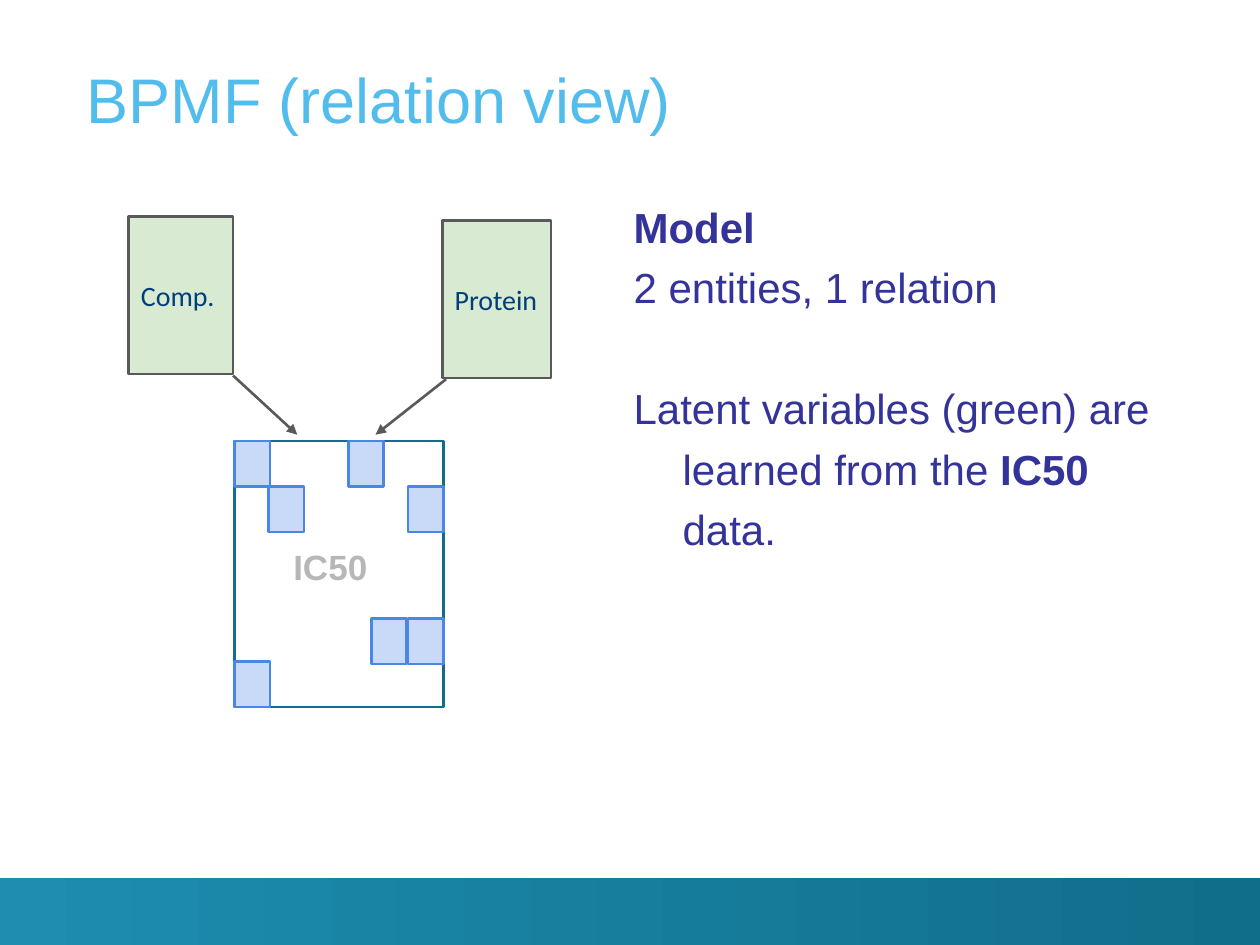
from lxml.etree import SubElement
from pptx import Presentation
from pptx.dml.color import RGBColor
from pptx.enum.shapes import MSO_CONNECTOR, MSO_SHAPE
from pptx.enum.text import MSO_ANCHOR, PP_ALIGN
from pptx.oxml.ns import qn
from pptx.util import Pt


def paint(code):
    return RGBColor.from_string(code)


class Deck:
    sans, label = "Arial", "Calibri"
    sky, ink, navy, gray = "52BDEC", "333399", "00407A", "B7B7B7"
    teal, edge, dark = "116E8A", "4A86E8", "595959"
    blue, green = "C9DAF8", "D9EAD3"
    pad, line = 7.2, 1.5

    def __init__(self, wide, high):
        self.prs = Presentation()
        self.prs.slide_width, self.prs.slide_height = Pt(wide), Pt(high)
        self.slide = self.prs.slides.add_slide(self.prs.slide_layouts[6])
        self.shapes = self.slide.shapes

    def rect(self, x, y, w, h, fill=None, edge=None):
        box = self.shapes.add_shape(MSO_SHAPE.RECTANGLE, Pt(x), Pt(y), Pt(w), Pt(h))
        box.shadow.inherit = False
        if fill:
            box.fill.solid()
            box.fill.fore_color.rgb = paint(fill)
        else:
            box.fill.background()
        if edge:
            box.line.color.rgb = paint(edge)
            box.line.width = Pt(self.line)
        else:
            box.line.fill.background()
        return box

    def band(self, x, y, w, h, start, end):
        fill = self.rect(x, y, w, h).fill
        fill.gradient()
        fill.gradient_angle = 0
        for stop, code in zip(fill.gradient_stops, (start, end)):
            stop.color.rgb = paint(code)

    def frame(self, box, anchor):
        text = box.text_frame
        text.word_wrap = True
        text.vertical_anchor = anchor
        text.margin_left = text.margin_right = Pt(self.pad)
        text.margin_top = text.margin_bottom = Pt(self.pad)
        return text

    def run(self, para, words, size, color, font=sans, bold=False):
        para.alignment = PP_ALIGN.LEFT
        run = para.add_run()
        run.text = words
        run.font.size, run.font.bold, run.font.name = Pt(size), bold, font
        run.font.color.rgb = paint(color)

    def text(self, x, y, w, h, anchor=MSO_ANCHOR.TOP):
        return self.frame(self.shapes.add_textbox(Pt(x), Pt(y), Pt(w), Pt(h)), anchor)

    def node(self, x, y, w, h, words):
        text = self.frame(self.rect(x, y, w, h, self.green, self.dark), MSO_ANCHOR.MIDDLE)
        self.run(text.paragraphs[0], words, 16, self.navy, self.label)

    def body(self, x, y, w, h, paras):
        text = self.text(x, y, w, h)
        for i, (gap, runs) in enumerate(paras):
            para = text.paragraphs[0] if i == 0 else text.add_paragraph()
            props = para._p.get_or_add_pPr()
            props.set("marL", str(Pt(28)))
            props.set("indent", str(Pt(-28)))
            para.line_spacing = 1.2
            if gap:
                para.space_before = Pt(gap)
            for words, bold in runs:
                self.run(para, words, 24, self.ink, bold=bold)

    def arrow(self, x1, y1, x2, y2):
        link = self.shapes.add_connector(
            MSO_CONNECTOR.STRAIGHT, Pt(x1), Pt(y1), Pt(x2), Pt(y2))
        link.line.color.rgb = paint(self.dark)
        link.line.width = Pt(self.line)
        SubElement(link.line._get_or_add_ln(), qn("a:tailEnd"), type="triangle")
        SubElement(link._element.spPr, qn("a:effectLst"))


def main():
    deck = Deck(720, 540)

    # Footer band and title
    deck.band(0, 501.8, 720, 38.2, "1D8DB0", deck.teal)
    title = deck.text(42.5, 14.4, 656, 70.6, MSO_ANCHOR.BOTTOM)
    deck.run(title.paragraphs[0], "BPMF (relation view)", 36, deck.sky)

    # Model notes
    deck.body(355, 102.2, 321, 410, [
        (0, [("Model", True)]),
        (0, [("2 entities, 1 relation", False)]),
        (34.6, [("Latent variables (green) are learned from the ", False),
                ("IC50 ", True), ("data.", False)]),
    ])

    # Relation matrix with its known cells
    left, top, wide, high = 134, 252, 119.5, 152
    cell_w, cell_h = 20.3, 26
    last, low = wide - cell_w, 101.5
    deck.rect(left, top, wide, high, edge=deck.teal)
    cells = [(0, 0), (19.5, cell_h), (last, cell_h), (65, 0),
             (0, high - cell_h), (last, low), (last - 21, low)]
    for x, y in cells:
        deck.rect(left + x, top + y, cell_w, cell_h, deck.blue, deck.edge)
    name = deck.text(160.5, 304.6, 66.2, 57.6)
    deck.run(name.paragraphs[0], "IC50", 20, deck.gray, bold=True)

    # Entities and their links to the matrix
    deck.node(73.5, 123.7, 59.7, 90, "Comp.")
    deck.node(252.8, 126, 62.2, 90, "Protein")
    deck.arrow(133.2, 214.6, 169.9, 248.4)
    deck.arrow(254.9, 216.7, 214.6, 248.4)

    deck.prs.save("out.pptx")


if __name__ == "__main__":
    main()
